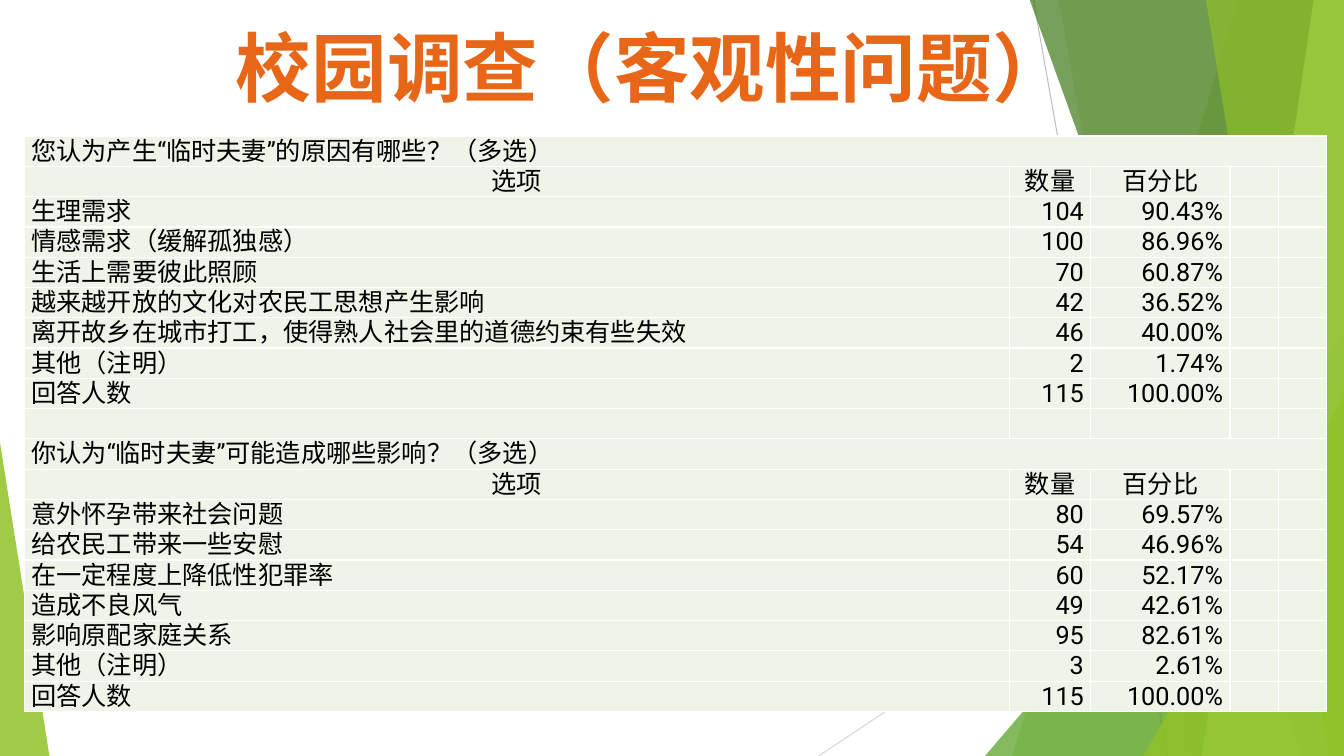
from lxml import etree
from pptx import Presentation
from pptx.dml.color import RGBColor
from pptx.enum.shapes import MSO_CONNECTOR, MSO_SHAPE
from pptx.enum.text import MSO_ANCHOR, MSO_AUTO_SIZE, PP_ALIGN
from pptx.oxml.ns import qn
from pptx.util import Inches, Pt

LEFT, CENTER, RIGHT = PP_ALIGN.LEFT, PP_ALIGN.CENTER, PP_ALIGN.RIGHT
TOP, BOTTOM = MSO_ANCHOR.TOP, MSO_ANCHOR.BOTTOM
STRAIGHT, TRIANGLE = MSO_CONNECTOR.STRAIGHT, MSO_SHAPE.ISOSCELES_TRIANGLE
GROW = MSO_AUTO_SIZE.SHAPE_TO_FIT_TEXT

FONT = "Roboto"
COLORS = {
    "title": "E76618", "text": "000000", "cell": "EEF4E8", "border": "FFFFFF",
    "line_dark": "BFBFBF", "line_light": "D9D9D9", "lime": "90C226",
    "green": "54A021", "forest": "3F7819", "pale": "C0E474",
}
SLIDE_W, SLIDE_H = 13.33, 7.5

TITLE = "校园调查（客观性问题）"
HEADER = ("选项", "数量", "百分比")
SURVEY = [
    ("您认为产生“临时夫妻”的原因有哪些？（多选）", [
        ("生理需求", "104", "90.43%"),
        ("情感需求（缓解孤独感）", "100", "86.96%"),
        ("生活上需要彼此照顾", "70", "60.87%"),
        ("越来越开放的文化对农民工思想产生影响", "42", "36.52%"),
        ("离开故乡在城市打工，使得熟人社会里的道德约束有些失效", "46", "40.00%"),
        ("其他（注明）", "2", "1.74%"),
        ("回答人数", "115", "100.00%"),
    ]),
    ("你认为“临时夫妻”可能造成哪些影响？（多选）", [
        ("意外怀孕带来社会问题", "80", "69.57%"),
        ("给农民工带来一些安慰", "54", "46.96%"),
        ("在一定程度上降低性犯罪率", "60", "52.17%"),
        ("造成不良风气", "49", "42.61%"),
        ("影响原配家庭关系", "95", "82.61%"),
        ("其他（注明）", "3", "2.61%"),
        ("回答人数", "115", "100.00%"),
    ]),
]
COL_WIDTHS = (9.77, 0.81, 1.38, 0.48, 0.48)
ROW_H = 0.3

LINES = [
    ((10.25, 0), (11.58, SLIDE_H), "line_dark"),
    ((SLIDE_W, 4.03), (8.12, SLIDE_H), "line_light"),
]
# Bands: top-left x, bottom-left x. Triangles: left, top, width, apex.
DECOR = [
    ("band", (12.28, 10.04), "lime", 30),
    ("band", (10.5, 11.83), "lime", 20),
    ("triangle", (9.77, 3.33, 3.56, 1), "green", 72),
    ("band", (10.21, 12.91), "forest", 70),
    ("band", (13.03, 11.92), "pale", 70),
    ("band", (11.96, 13.18), "lime", 65),
    ("triangle", (11.34, 3.93, 1.99, 1), "lime", 80),
    ("triangle", (0, 4.39, 0.49, 0), "lime", 85),
]


def rgb(name):
    return RGBColor.from_string(COLORS[name])


def add_line(shapes, start, end, color):
    line = shapes.add_connector(STRAIGHT, *map(Inches, start + end))
    line.line.color.rgb = rgb(color)
    line.line.width = Pt(0.75)
    etree.SubElement(line.element.spPr, qn("a:effectLst"))


def add_decor(shapes, kind, geometry, color, opacity):
    if kind == "band":
        top_x, bottom_x = geometry
        builder = shapes.build_freeform(Inches(top_x), Inches(-0.01), scale=1.0)
        corners = [(SLIDE_W, -0.01), (SLIDE_W, SLIDE_H), (bottom_x, SLIDE_H)]
        builder.add_line_segments([(Inches(x), Inches(y)) for x, y in corners])
        sp = builder.convert_to_shape()
    else:
        x, y, w, apex = geometry
        sp = shapes.add_shape(TRIANGLE, *map(Inches, (x, y, w, SLIDE_H - y)))
        sp.adjustments[0] = apex
    sp.shadow.inherit = False
    sp.line.fill.background()
    sp.fill.solid()
    sp.fill.fore_color.rgb = rgb(color)
    fill_color = sp.element.spPr.find(".//" + qn("a:srgbClr"))
    etree.SubElement(fill_color, qn("a:alpha"), val=str(opacity * 1000))


def write(tf, text, align, size, color, bold=False):
    tf.text = text
    p = tf.paragraphs[0]
    p.alignment = align
    p.font.size = Pt(size)
    p.font.bold = bold
    p.font.color.rgb = rgb(color)
    p.font.name = FONT
    defaults = p._p.pPr.find(qn("a:defRPr"))
    etree.SubElement(defaults, qn("a:ea"), typeface=FONT)


def add_borders(cell):
    tc_pr = cell._tc.get_or_add_tcPr()
    for i, side in enumerate(("lnL", "lnR", "lnT", "lnB")):
        ln = etree.Element(qn("a:" + side), w=str(Pt(1)))
        fill = etree.SubElement(ln, qn("a:solidFill"))
        etree.SubElement(fill, qn("a:srgbClr"), val=COLORS["border"])
        tc_pr.insert(i, ln)


def survey_rows():
    rows = []
    for question, answers in SURVEY:
        if rows:
            rows.append(((), ()))
        rows.append(((question,), (LEFT,)))
        rows.append((HEADER, (CENTER,) * 3))
        rows += [(answer, (LEFT, RIGHT, RIGHT)) for answer in answers]
    return rows


def add_survey_table(shapes):
    rows = survey_rows()
    size = map(Inches, (0.24, 1.35, sum(COL_WIDTHS), ROW_H * len(rows)))
    table = shapes.add_table(len(rows), len(COL_WIDTHS), *size).table
    table.first_row = table.horz_banding = False
    for column, width in zip(table.columns, COL_WIDTHS):
        column.width = Inches(width)
    for r, (texts, aligns) in enumerate(rows):
        table.rows[r].height = Inches(ROW_H)
        for c in range(len(COL_WIDTHS)):
            cell = table.cell(r, c)
            cell.fill.solid()
            cell.fill.fore_color.rgb = rgb("cell")
            cell.margin_left = cell.margin_right = Inches(0.07)
            cell.margin_top = cell.margin_bottom = 0
            cell.vertical_anchor = BOTTOM
            add_borders(cell)
            text, align = (texts[c], aligns[c]) if c < len(texts) else ("", LEFT)
            write(cell.text_frame, text, align, 18, "text")
        if len(texts) == 1:
            table.cell(r, 0).merge(table.cell(r, len(COL_WIDTHS) - 1))


def main():
    prs = Presentation()
    prs.slide_width, prs.slide_height = Inches(SLIDE_W), Inches(SLIDE_H)
    s = prs.slides.add_slide(prs.slide_layouts[5])

    for line in LINES:
        add_line(s.shapes, *line)
    for item in DECOR:
        add_decor(s.shapes, *item)

    title = s.shapes.title
    title.left, title.top, title.width, title.height = map(
        Inches, (2.2, 0.16, 8.53, 1.01))
    tf = title.text_frame
    write(tf, TITLE, CENTER, 54, "title", bold=True)
    tf.word_wrap = False
    tf.auto_size = GROW
    tf.vertical_anchor = TOP
    title.element.getparent().append(title.element)

    add_survey_table(s.shapes)
    prs.save("out.pptx")


if __name__ == "__main__":
    main()
